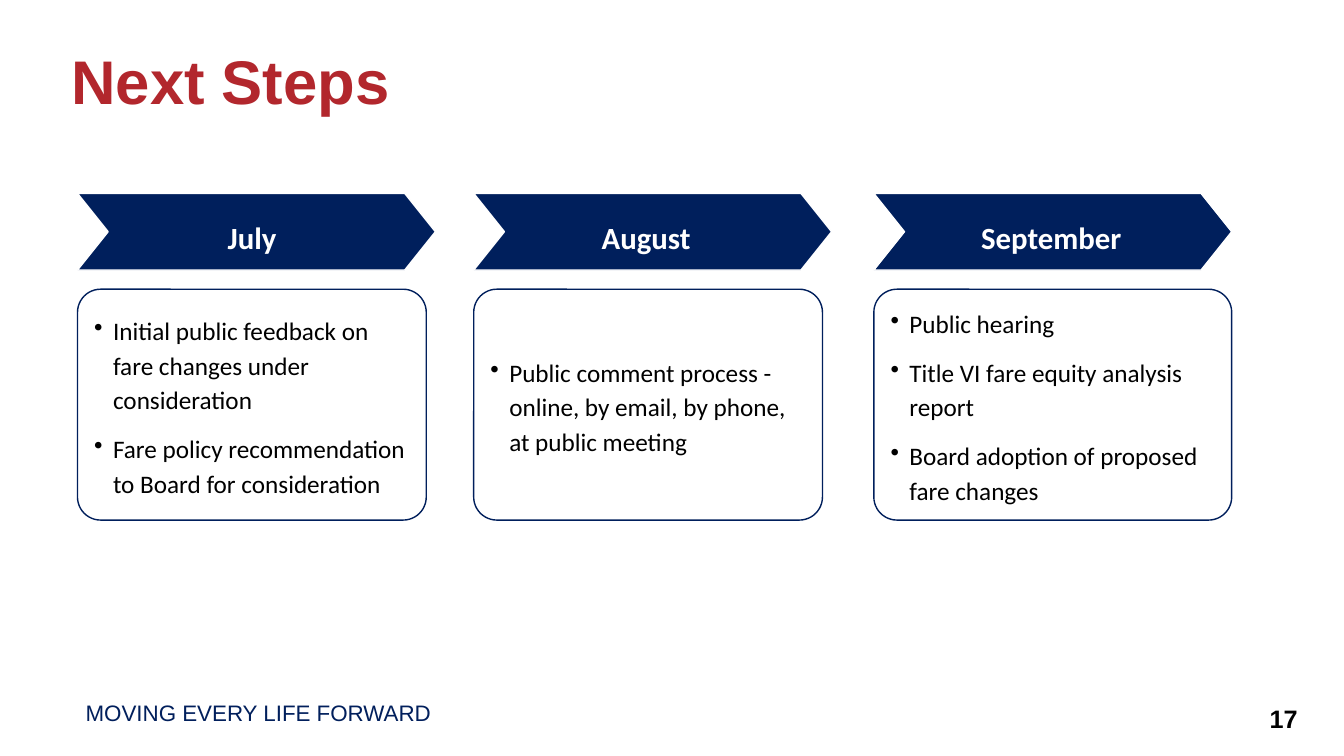
from lxml import etree
from pptx import Presentation
from pptx.dml.color import RGBColor
from pptx.enum import shapes, text
from pptx.oxml import ns
from pptx.util import Pt

COLORS = {"navy": "001F5C", "footer": "011F5C", "red": "B2272D",
          "white": "FFFFFF", "black": "000000"}
CHEVRON_WIDTH = 255.6
# month, column left, label left, card width, steps
MONTHS = [
    ("July", 55.4, 78.5, 249.1,
     ["Initial public feedback on fare changes under consideration",
      "Fare policy recommendation to Board for consideration"]),
    ("August", 338.4, 360, 249.1,
     ["Public comment process - online, by email, by phone, at public meeting"]),
    ("September", 624.2, 649.4, CHEVRON_WIDTH,
     ["Public hearing",
      "Title VI fare equity analysis report",
      "Board adoption of proposed fare changes"]),
]

presentation = Presentation()
presentation.slide_width = Pt(960)
presentation.slide_height = Pt(540)
slide = presentation.slides.add_slide(presentation.slide_layouts[6])


def add_label(wording, box, size, font, color, bold=True, margins=(0, 0),
              align=text.PP_ALIGN.LEFT, spacing=1.0, anchor=text.MSO_ANCHOR.TOP):
    """Add a one-line text box; margins are (horizontal, vertical)."""
    frame = slide.shapes.add_textbox(*map(Pt, box)).text_frame
    frame.word_wrap = True
    frame.vertical_anchor = anchor
    frame.margin_left = frame.margin_right = Pt(margins[0])
    frame.margin_top = frame.margin_bottom = Pt(margins[1])
    paragraph = frame.paragraphs[0]
    paragraph.alignment = align
    paragraph.line_spacing = spacing
    run = paragraph.add_run()
    run.text = wording
    run.font.size = Pt(size)
    run.font.name = font
    run.font.bold = bold
    run.font.color.rgb = RGBColor.from_string(COLORS[color])


def add_panel(preset, box, adjustment, fill, line):
    shape = slide.shapes.add_shape(preset, *map(Pt, box))
    shape.shadow.inherit = False
    shape.adjustments[0] = adjustment
    shape.fill.solid()
    shape.fill.fore_color.rgb = RGBColor.from_string(COLORS[fill])
    shape.line.color.rgb = RGBColor.from_string(COLORS[line])
    shape.line.width = Pt(1)
    return shape


add_label("Next Steps", (43.9, 33.1, 828, 54.7), 44, "Arial", "red",
          margins=(7.2, 3.6), spacing=0.9, anchor=text.MSO_ANCHOR.MIDDLE)

for month, left, label_left, card_width, steps in MONTHS:
    add_panel(shapes.MSO_SHAPE.CHEVRON, (left, 138.2, CHEVRON_WIDTH, 54.7),
              0.4, "navy", "white")
    add_label(month, (label_left, 145.4, 203, 41), 22, "Calibri", "white",
              margins=(7.2, 7.2), align=text.PP_ALIGN.CENTER, spacing=1.14)

    card = add_panel(shapes.MSO_SHAPE.ROUNDED_RECTANGLE,
                     (left, 206.6, card_width, 164.9), 0.1, "white", "navy")
    fill_color = card.fill._xPr.find(ns.qn("a:solidFill"))[0]
    etree.SubElement(fill_color, ns.qn("a:alpha"), val="90000")

    frame = card.text_frame
    frame.word_wrap = True
    frame.vertical_anchor = text.MSO_ANCHOR.MIDDLE
    frame.margin_left = frame.margin_right = Pt(7.2)
    frame.margin_top = frame.margin_bottom = Pt(7.2)
    for index, step in enumerate(steps):
        paragraph = frame.add_paragraph() if index else frame.paragraphs[0]
        paragraph.alignment = text.PP_ALIGN.LEFT
        paragraph.line_spacing = 1.15
        if index:
            paragraph.space_before = Pt(10)
        properties = paragraph._p.get_or_add_pPr()
        properties.set("marL", str(Pt(13.5)))
        properties.set("indent", str(-Pt(13.5)))
        bullet_color = etree.SubElement(properties, ns.qn("a:buClr"))
        etree.SubElement(bullet_color, ns.qn("a:srgbClr"), val=COLORS["black"])
        etree.SubElement(properties, ns.qn("a:buChar"), char="•")
        run = paragraph.add_run()
        run.text = step
        run.font.size = Pt(18)
        run.font.name = "Calibri"
        run.font.color.rgb = RGBColor.from_string(COLORS["black"])

add_label("MOVING EVERY LIFE FORWARD", (61.2, 499.7, 342.7, 19.4), 16, "Arial",
          "footer", bold=False)
add_label("17", (906.5, 502.6, 20.9, 20.2), 18, "Arial", "black",
          align=text.PP_ALIGN.CENTER)

presentation.save("out.pptx")
